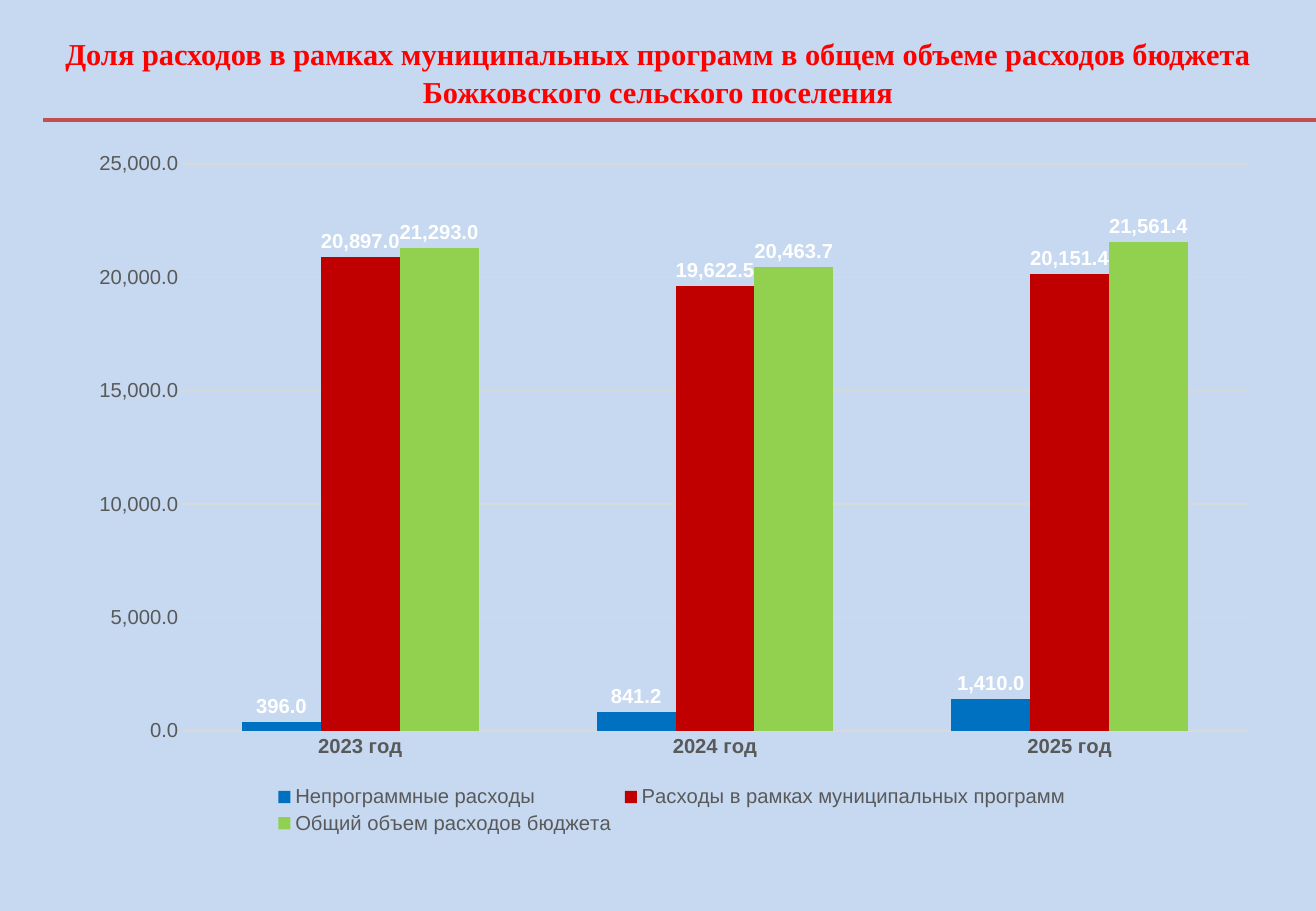
"""Build a slide that charts programme spending as part of the village budget."""
from lxml.etree import SubElement
from pptx import Presentation
from pptx.chart.data import CategoryChartData
from pptx.dml.color import RGBColor
from pptx.enum.chart import XL_CHART_TYPE, XL_LABEL_POSITION, XL_LEGEND_POSITION, XL_TICK_MARK
from pptx.enum.shapes import MSO_CONNECTOR
from pptx.enum.text import MSO_ANCHOR, MSO_AUTO_SIZE, PP_ALIGN
from pptx.oxml.ns import qn
from pptx.util import Pt

TITLE = ("Доля расходов в рамках муниципальных программ в общем объеме "
         "расходов бюджета Божковского сельского поселения")
YEARS = ["2023 год", "2024 год", "2025 год"]
SERIES = [
    ("Непрограммные расходы", "other", (396, 841.2, 1410)),
    ("Расходы в рамках муниципальных программ", "program", (20897, 19622.5, 20151.4)),
    ("Общий объем расходов бюджета", "total", (21293, 20463.7, 21561.4)),
]
COLORS = {
    "back": "C6D9F1", "title": "FF0000", "rule": "C0504D", "axis": "595959",
    "grid": "D9D9D9", "label": "FFFFFF",
    "other": "0070C0", "program": "C00000", "total": "92D050",
}
FORMAT = "#,##0.0"
SCALE = 7526
WIDTH, HEIGHT = 1316, 911
TITLE_BOX = (0, 26, WIDTH, 84)
RULE = (43, 120, WIDTH, 120)
CHART_BOX = (74, 140, 1196, 699)
PLOT_BOX = (183, 164, 1064, 567)


def px(*sizes):
    return [size * SCALE for size in sizes]


def color(name):
    return RGBColor.from_string(COLORS[name])


def style(font, size=12, tint="axis", bold=False, face="Arial"):
    font.size, font.bold, font.name = Pt(size), bold, face
    font.color.rgb = color(tint)


def write(frame, text, align=PP_ALIGN.CENTER, space=1.07, **look):
    para = frame.paragraphs[0]
    para.alignment, para.line_spacing = align, space
    run = para.add_run()
    run.text = text
    style(run.font, **look)


def place_plot(chart):
    area = chart.plots[0]._element.getparent()
    layout = area.find(qn("c:layout"))
    if layout is None:
        layout = SubElement(area, qn("c:layout"))
        area.insert(0, layout)
    manual = SubElement(layout, qn("c:manualLayout"))
    left, top, wide, high = CHART_BOX
    x, y, w, h = PLOT_BOX
    parts = [("layoutTarget", "inner"), ("xMode", "edge"), ("yMode", "edge"),
             ("x", (x - left) / wide), ("y", (y - top) / high),
             ("w", w / wide), ("h", h / high)]
    for tag, value in parts:
        SubElement(manual, qn("c:" + tag)).set("val", str(value))


def add_title(slide):
    title = slide.shapes.title
    title.left, title.top, title.width, title.height = px(*TITLE_BOX)
    frame = title.text_frame
    frame.word_wrap, frame.auto_size = True, MSO_AUTO_SIZE.NONE
    frame.vertical_anchor = MSO_ANCHOR.TOP
    write(frame, TITLE, size=18, tint="title", bold=True, face="Times New Roman")


def add_rule(slide):
    rule = slide.shapes.add_connector(MSO_CONNECTOR.STRAIGHT, *px(*RULE))
    rule.line.color.rgb, rule.line.width = color("rule"), Pt(2.5)
    SubElement(rule._element.spPr, qn("a:effectLst"))


def add_budget(slide):
    data = CategoryChartData(number_format=FORMAT)
    data.categories = YEARS
    for name, _, values in SERIES:
        data.add_series(name, values)
    chart = slide.shapes.add_chart(
        XL_CHART_TYPE.COLUMN_CLUSTERED, *px(*CHART_BOX), data).chart
    style(chart.font)
    chart.has_title = False
    chart.has_legend = True
    legend = chart.legend
    legend.position, legend.include_in_layout = XL_LEGEND_POSITION.BOTTOM, False
    style(legend.font)

    years, money = chart.category_axis, chart.value_axis
    for axis in (years, money):
        axis.major_tick_mark = axis.minor_tick_mark = XL_TICK_MARK.NONE
        axis.format.line.fill.background()
        style(axis.tick_labels.font, bold=axis is years)
    money.minimum_scale, money.maximum_scale, money.major_unit = 0, 25000, 5000
    money.tick_labels.number_format = FORMAT
    money.tick_labels.number_format_is_linked = False
    grid = money.major_gridlines.format.line
    grid.color.rgb, grid.width = color("grid"), Pt(0.75)

    plot = chart.plots[0]
    plot.gap_width, plot.overlap, plot.vary_by_categories = 150, 0, False
    for series, (_, tint, _) in zip(plot.series, SERIES):
        series.format.fill.solid()
        series.format.fill.fore_color.rgb = color(tint)
        labels = series.data_labels
        labels.show_value, labels.position = True, XL_LABEL_POSITION.OUTSIDE_END
        labels.number_format, labels.number_format_is_linked = FORMAT, False
        style(labels.font, tint="label", bold=True)
    place_plot(chart)


def main():
    deck = Presentation()
    deck.slide_width, deck.slide_height = px(WIDTH, HEIGHT)
    slide = deck.slides.add_slide(deck.slide_layouts[5])
    slide.background.fill.solid()
    slide.background.fill.fore_color.rgb = color("back")
    add_rule(slide)
    add_title(slide)
    add_budget(slide)
    deck.save("out.pptx")


if __name__ == "__main__":
    main()
